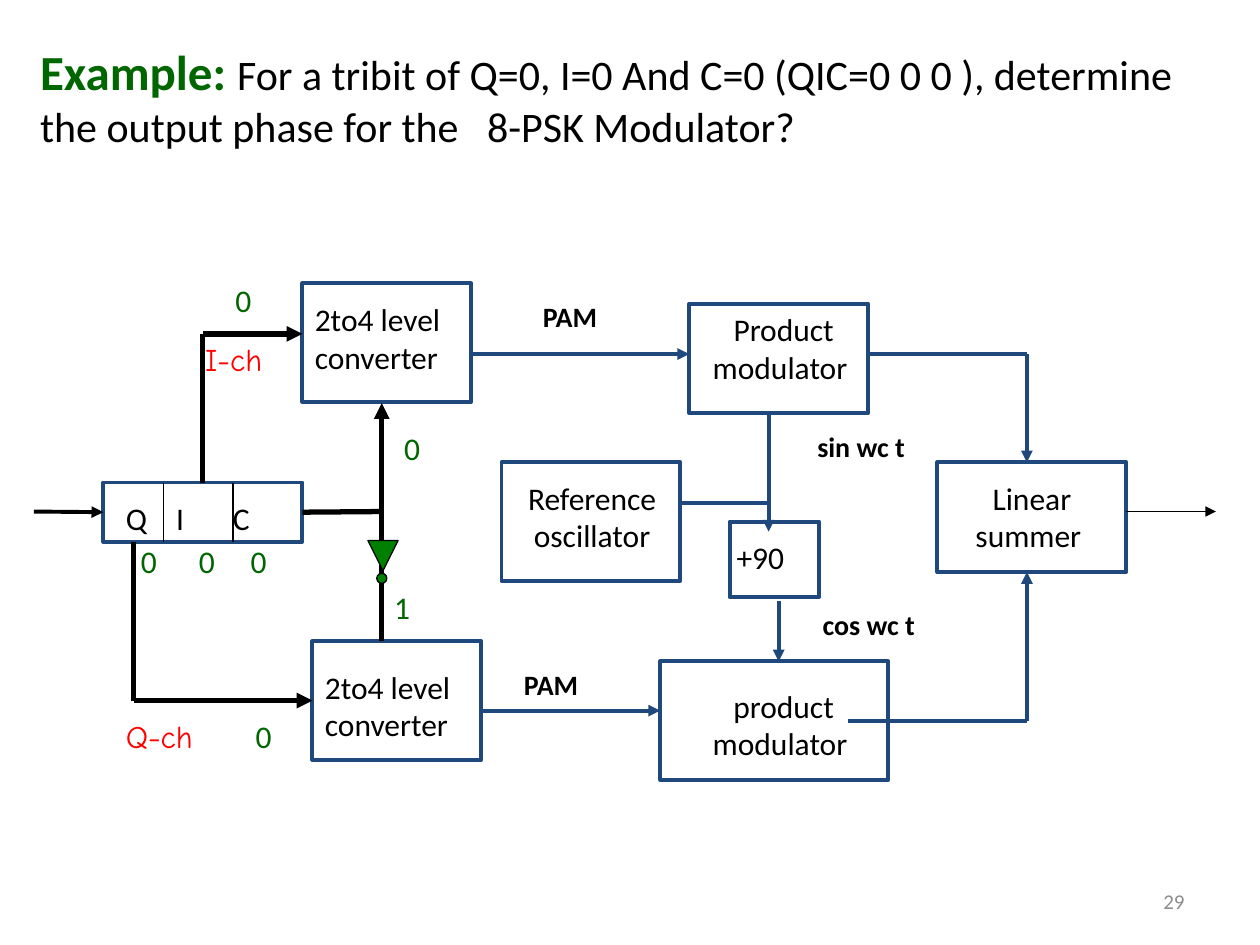
from lxml.etree import SubElement
from pptx import Presentation
from pptx.dml.color import RGBColor
from pptx.enum.shapes import MSO_CONNECTOR, MSO_SHAPE as SHAPE
from pptx.enum.text import MSO_ANCHOR, MSO_AUTO_SIZE, PP_ALIGN as ALIGN
from pptx.oxml.ns import qn
from pptx.util import Inches, Pt

rgb = RGBColor.from_string
BLACK, WHITE, NAVY = "000000", "FFFFFF", "1F497D"
GREEN, DARK_GREEN, RED, GRAY = "008000", "006600", "FF0000", "8C8C8C"
TOP, LEFT, BOTTOM, RIGHT = range(4)

prs = Presentation()
prs.slide_width, prs.slide_height = Inches(10), Inches(7.5)
s = prs.slides.add_slide(prs.slide_layouts[6])


def add_text(text, at=None, p=None, size=18, color=BLACK, bold=False,
             font="Calibri", align=ALIGN.LEFT, anchor=MSO_ANCHOR.TOP, tabs=()):
    """Write text in a new box at (left, top, width, height), or append it to p."""
    if p is None:
        tf = s.shapes.add_textbox(*map(Inches, at)).text_frame
        tf.word_wrap = True
        tf.auto_size = MSO_AUTO_SIZE.SHAPE_TO_FIT_TEXT
        tf.vertical_anchor = anchor
        p = tf.paragraphs[0]
        p.alignment = align
    if tabs:
        stops = SubElement(p._p.get_or_add_pPr(), qn("a:tabLst"))
        for pos in tabs:
            SubElement(stops, qn("a:tab"), pos=str(Inches(pos)), algn="l")
    r = p.add_run()
    r.text = text
    r.font.name, r.font.size, r.font.bold = font, Pt(size), bold
    r.font.color.rgb = rgb(color)
    return p


def add_line(x1, y1, x2, y2, color=NAVY, width=2.25, arrow=False, begin=None, end=None):
    """Draw a line; begin and end are (shape, side) pairs to join it to."""
    c = s.shapes.add_connector(MSO_CONNECTOR.STRAIGHT, *map(Inches, (x1, y1, x2, y2)))
    c.line.color.rgb = rgb(color)
    c.line.width = Pt(width)
    if arrow:
        SubElement(c.line._get_or_add_ln(), qn("a:tailEnd"), type="triangle")
    SubElement(c._element.spPr, qn("a:effectLst"))
    if begin:
        c.begin_connect(*begin)
    if end:
        c.end_connect(*end)


# Blocks of the modulator
blocks = {}
for name, at in [
    ("phase shift", (5.79, 4.14, 0.71, 0.6)),
    ("oscillator", (3.98, 3.67, 1.42, 0.94)),
    ("Q product", (5.24, 5.25, 1.81, 0.94)),
    ("summer", (7.44, 3.67, 1.5, 0.87)),
    ("I product", (5.47, 2.41, 1.42, 0.87)),
    ("I converter", (2.4, 2.25, 1.34, 0.94)),
    ("Q converter", (2.48, 5.09, 1.34, 0.94)),
    ("register", (0.82, 3.83, 1.58, 0.47)),
]:
    sp = s.shapes.add_shape(SHAPE.RECTANGLE, *map(Inches, at))
    sp.shadow.inherit = False
    sp.fill.solid()
    sp.fill.fore_color.rgb = rgb(WHITE)
    sp.line.color.rgb = rgb(NAVY)
    sp.line.width = Pt(2.25)
    blocks[name] = sp
register = blocks["register"]

# Modulated signal paths
for x1, y1, x2, y2, arrow in [
    (3.82, 5.64, 5.24, 5.64, True),
    (6.89, 2.81, 8.15, 2.81, False),
    (8.15, 2.81, 8.15, 3.67, True),
    (6.73, 5.72, 8.15, 5.72, False),
    (8.15, 5.72, 8.15, 4.54, True),
    (6.18, 4.77, 6.18, 5.25, True),
    (6.1, 3.28, 6.1, 4.22, True),
    (5.4, 3.99, 6.1, 3.99, False),
    (3.74, 2.81, 5.47, 2.81, True),
]:
    add_line(x1, y1, x2, y2, arrow=arrow)

# Input, output and bit paths
add_line(0.27, 4.06, 0.82, 4.06, BLACK, arrow=True, end=(register, LEFT))
add_line(8.94, 4.06, 9.65, 4.06, BLACK, 0.75, arrow=True)
add_line(1.61, 3.83, 1.61, 2.65, BLACK, 3, begin=(register, TOP))
add_line(1.61, 2.65, 2.4, 2.65, BLACK, 3, arrow=True)
add_line(1.06, 4.3, 1.06, 5.56, BLACK, 3)
add_line(1.06, 5.56, 2.48, 5.56, BLACK, 3, arrow=True, end=(blocks["Q converter"], LEFT))
add_line(3.03, 4.06, 3.03, 3.2, BLACK, 3, arrow=True)
add_line(2.4, 4.06, 3.03, 4.06, BLACK, 3, begin=(register, RIGHT))
add_line(3.03, 4.06, 3.03, 5.09, BLACK, 3)
for x in (1.3, 1.85):
    add_line(x, 3.83, x, 4.3, BLACK, 0.75)

# Inverter
for kind, x, y, size in [
    (SHAPE.FLOWCHART_MERGE, 2.92, 4.29, 0.24),
    (SHAPE.FLOWCHART_CONNECTOR, 2.99, 4.55, 0.08),
]:
    sp = s.shapes.add_shape(kind, Inches(x), Inches(y), Inches(size), Inches(size))
    sp.shadow.inherit = False
    sp.fill.solid()
    sp.fill.fore_color.rgb = rgb(GREEN)
    sp.line.color.rgb = rgb(BLACK)
    sp.line.width = Pt(0.75)

# Block captions
for text, at in [
    ("Reference oscillator", (3.95, 3.75, 1.5, 0.7)),
    ("Product modulator ", (5.55, 2.41, 1.34, 0.7)),
    ("+90", (5.6, 4.22, 0.87, 0.4)),
    ("product modulator ", (5.55, 5.4, 1.34, 0.7)),
    ("Linear summer ", (7.6, 3.75, 1.18, 0.7)),
]:
    add_text(text, at, align=ALIGN.CENTER)
for x, y in [(2.4, 2.33), (2.48, 5.25)]:
    add_text("2to4 level converter", (x, y, 1.42, 0.7))
add_text("Q\tI\tC", (0.9, 3.91, 1.5, 0.4), tabs=(0.4, 0.85))

# Signal labels
for text, at, align in [
    ("PAM", (4.06, 5.25, 0.87, 0.37), ALIGN.LEFT),
    ("PAM", (4.21, 2.33, 0.87, 0.37), ALIGN.LEFT),
    ("sin wc t", (6.02, 3.36, 1.26, 0.37), ALIGN.RIGHT),
    ("cos wc t", (6.1, 4.77, 1.26, 0.37), ALIGN.RIGHT),
]:
    add_text(text, at, size=16, bold=True, align=align)
add_text("Q-ch", (0.9, 5.64, 0.87, 0.4), color=RED, font="Comic Neue")
add_text("I-ch", (1.53, 2.65, 0.79, 0.4), color=RED, font="Comic Neue")

# Bit values
for bit, x, y in [("0", 1.77, 2.18), ("0", 1.93, 5.64), ("0", 3.11, 3.36), ("1", 3.03, 4.62)]:
    add_text(bit, (x, y, 0.47, 0.4), color=DARK_GREEN)
add_text("0\t0\t0", (1.02, 4.25, 1.38, 0.4), color=DARK_GREEN, tabs=(0.46, 0.87))

# Question and slide number
p = add_text("Example: ", (0.22, 0.28, 9.56, 0.98), size=28, color=DARK_GREEN, bold=True)
add_text("For a tribit of Q=0, I=0 And C=0 (QIC=0 0 0 ), determine the output phase "
         "for the   8-PSK Modulator?", p=p, size=24)
add_text("29", (7.17, 7.01, 2.33, 0.28), size=12, color=GRAY,
         align=ALIGN.RIGHT, anchor=MSO_ANCHOR.MIDDLE)

prs.save("out.pptx")
